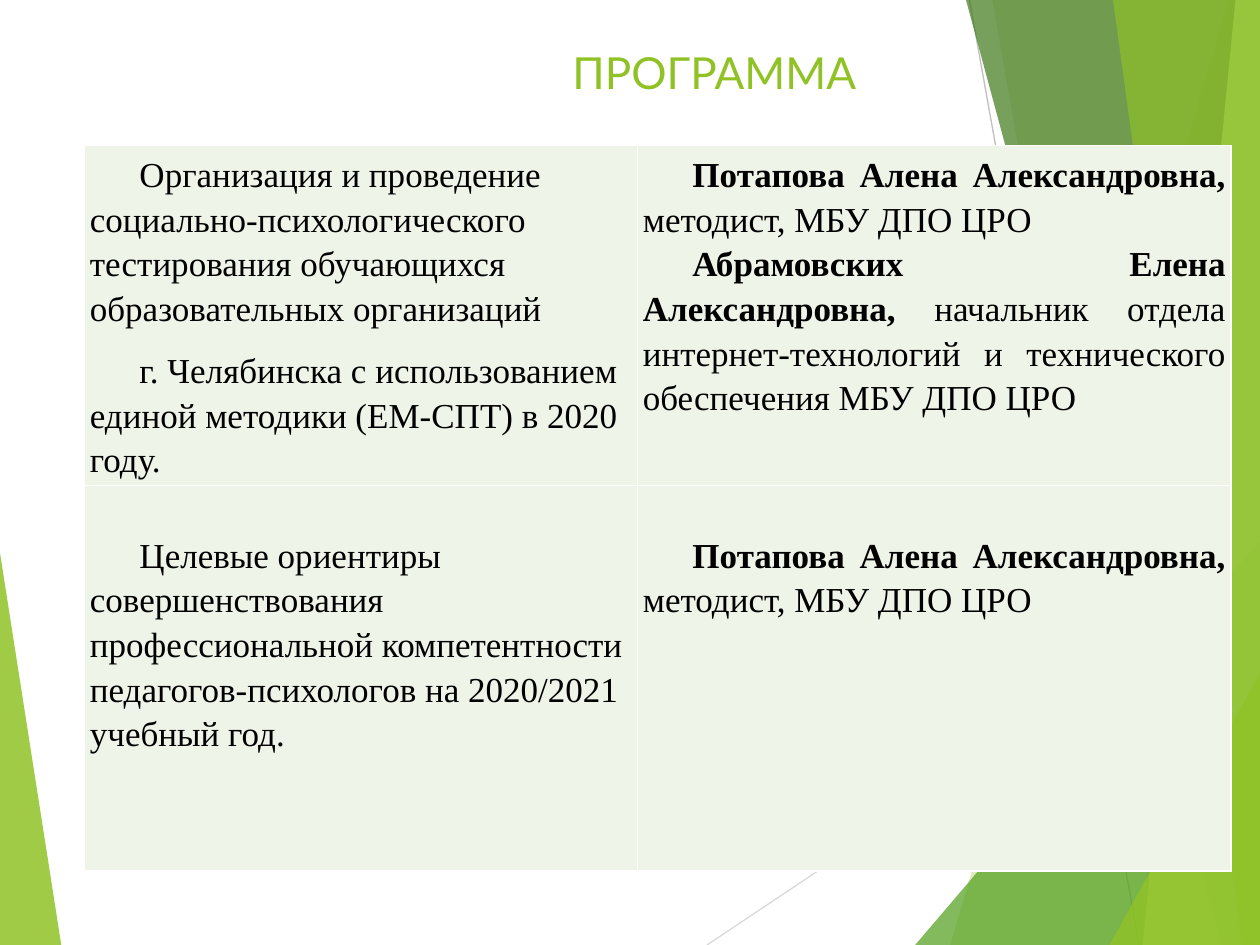
from lxml import etree
from pptx import Presentation
from pptx.dml.color import RGBColor
from pptx.enum.shapes import MSO_CONNECTOR
from pptx.enum.text import MSO_ANCHOR, PP_ALIGN
from pptx.oxml import parse_xml
from pptx.oxml.ns import nsdecls, qn
from pptx.util import Pt

GREEN = RGBColor(0x90, 0xC2, 0x26)
MID_GREEN = RGBColor(0x54, 0xA0, 0x21)
DARK_GREEN = RGBColor(0x3F, 0x78, 0x19)
PALE_GREEN = RGBColor(0xC0, 0xE4, 0x74)
CELL_FILL = RGBColor(0xEE, 0xF4, 0xE8)
BLACK = RGBColor(0, 0, 0)
LIGHT_GREY = RGBColor(0xD9, 0xD9, 0xD9)
GREY = RGBColor(0xBF, 0xBF, 0xBF)

WIDTH, HEIGHT = 720, 540

deck = Presentation()
deck.slide_width, deck.slide_height = Pt(WIDTH), Pt(HEIGHT)
page = deck.slides.add_slide(deck.slide_layouts[5])


def add_facet(corners, color, opacity):
    """Draw a translucent polygon; corners in points, opacity in percent."""
    builder = page.shapes.build_freeform(*corners[0], scale=Pt(1))
    builder.add_line_segments(corners[1:], close=True)
    facet = builder.convert_to_shape()
    facet.shadow.inherit = False
    facet.line.fill.background()
    facet.fill.solid()
    facet.fill.fore_color.rgb = color
    color_xml = facet.fill._xPr.find(qn("a:solidFill"))[0]
    etree.SubElement(color_xml, qn("a:alpha")).set("val", str(opacity * 1000))


# Background facets and lines
add_facet([(0, 316), (35, HEIGHT), (0, HEIGHT)], GREEN, 85)

for start, end, color in [
    ((404, HEIGHT), (WIDTH, 329), LIGHT_GREY),
    ((554, 0), (651, HEIGHT), GREY),
]:
    line = page.shapes.add_connector(
        MSO_CONNECTOR.STRAIGHT, *map(Pt, start), *map(Pt, end))
    line.line.color.rgb = color
    line.line.width = Pt(0.75)
    etree.SubElement(line._element.spPr, qn("a:effectLst"))

# Each right-hand facet: x at its top, y of its top, x at the bottom
# (left and right), colour and opacity
for top_x, top_y, bottom_x, color, opacity in [
    (702, 0, 543, GREEN, 30),
    (567, 0, 662, GREEN, 20),
    (WIDTH, 309, 523, MID_GREEN, 72),
    (552, 0, 698, DARK_GREEN, 70),
    (706, 0, 653, PALE_GREEN, 70),
    (636, 0, 710, GREEN, 65),
    (WIDTH, 385, 634, GREEN, 80),
]:
    corners = [(top_x, top_y), (bottom_x, HEIGHT), (WIDTH, HEIGHT)]
    if top_x < WIDTH:
        corners.append((WIDTH, top_y))
    add_facet(corners, color, opacity)

# Title
title = page.shapes.title
title.left, title.top, title.width, title.height = Pt(113), Pt(21.6), Pt(590.4), Pt(39)
title.text_frame.vertical_anchor = MSO_ANCHOR.MIDDLE
para = title.text_frame.paragraphs[0]
para.alignment = PP_ALIGN.CENTER
span = para.add_run()
span.text = "ПРОГРАММА"
span.font.name = "Lato"
span.font.size = Pt(25.2)
span.font.color.rgb = GREEN

# Programme table: each cell is a list of paragraphs, each a list of (text, bold)
POTAPOVA = [("Потапова Алена Александровна, ", True), ("методист, МБУ ДПО ЦРО ", False)]
ROWS = [
    [
        [
            [("Организация и проведение социально-психологического тестирования "
              "обучающихся образовательных организаций", False)],
            [("г. Челябинска с использованием единой методики (ЕМ-СПТ) в 2020 году.", False)],
        ],
        [
            POTAPOVA,
            [("Абрамовских Елена Александровна, ", True),
             ("начальник отдела интернет-технологий и технического обеспечения "
              "МБУ ДПО ЦРО", False)],
        ],
    ],
    [
        [
            [("Целевые ориентиры совершенствования профессиональной компетентности "
              "педагогов-психологов на 2020/2021 учебный год.", False)],
        ],
        [POTAPOVA],
    ],
]
COLUMN_WIDTHS = [316, 339]
ROW_HEIGHTS = [148.3, 220.3]
TOP_MARGINS = [3, 26]

table = page.shapes.add_table(
    2, 2, Pt(48.4), Pt(83), Pt(sum(COLUMN_WIDTHS)), Pt(sum(ROW_HEIGHTS))).table
table.first_row = table.horz_banding = False
for column, width in zip(table.columns, COLUMN_WIDTHS):
    column.width = Pt(width)

for r, row in enumerate(ROWS):
    table.rows[r].height = Pt(ROW_HEIGHTS[r])
    for c, paragraphs in enumerate(row):
        cell = table.cell(r, c)
        cell.margin_left = cell.margin_right = cell.margin_bottom = Pt(3)
        cell.margin_top = Pt(TOP_MARGINS[r])
        for side in ("lnL", "lnR", "lnT", "lnB"):
            cell._tc.get_or_add_tcPr().append(parse_xml(
                f'<a:{side} {nsdecls("a")} w="12700"><a:solidFill>'
                f'<a:srgbClr val="FFFFFF"/></a:solidFill></a:{side}>'))
        cell.fill.solid()
        cell.fill.fore_color.rgb = CELL_FILL
        for i, spans in enumerate(paragraphs):
            frame = cell.text_frame
            para = frame.add_paragraph() if i else frame.paragraphs[0]
            para.line_spacing = 1.15
            para.space_after = Pt(10 if (r, c) == (0, 0) else 0)
            para.alignment = PP_ALIGN.JUSTIFY if c else PP_ALIGN.LEFT
            para._p.get_or_add_pPr().set("indent", str(Pt(28.35)))
            for text, bold in spans:
                span = para.add_run()
                span.text = text
                span.font.name = "Times New Roman"
                span.font.size = Pt(20)
                span.font.bold = bold
                span.font.color.rgb = BLACK

deck.save("out.pptx")
